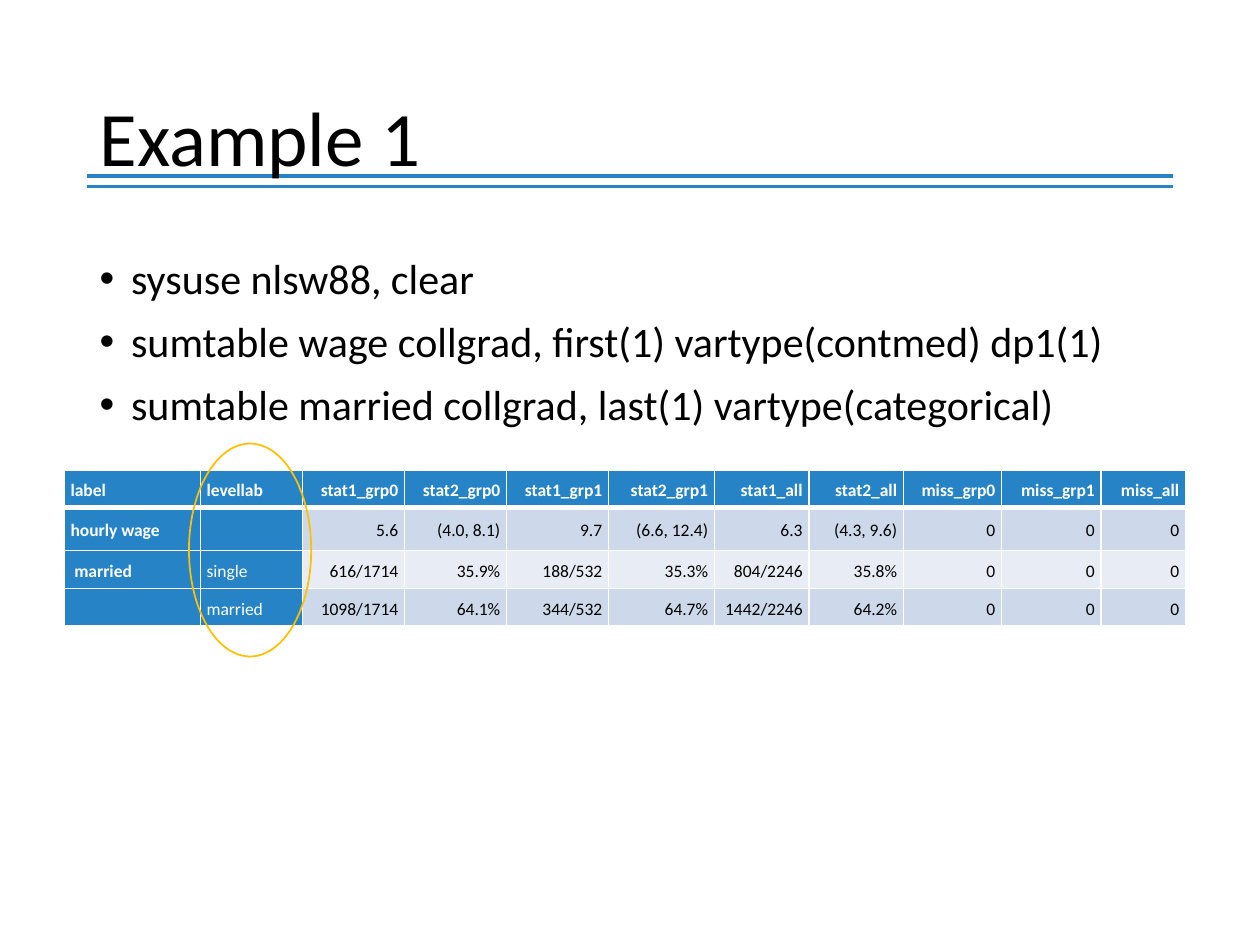
from dataclasses import dataclass

from lxml.etree import SubElement
from pptx import Presentation
from pptx.dml.color import RGBColor
from pptx.enum.shapes import MSO_CONNECTOR as Connector, MSO_SHAPE as Shape
from pptx.enum.text import MSO_ANCHOR as Anchor, PP_ALIGN as Align
from pptx.oxml.ns import qn
from pptx.util import Inches, Pt


@dataclass(frozen=True)
class Theme:
    font: str = "Calibri"
    accent: str = "2683C6"
    highlight: str = "FFC000"
    dark: str = "000000"
    light: str = "FFFFFF"
    odd_band: str = "CDD9EA"
    even_band: str = "E8EDF5"
    title_size: int = 44
    body_size: int = 24
    table_size: int = 10


BULLETS = [
    "sysuse nlsw88, clear",
    "sumtable wage collgrad, first(1) vartype(contmed) dp1(1)",
    "sumtable married collgrad, last(1) vartype(categorical)",
]
ROWS = [
    ["label", "levellab", "stat1_grp0", "stat2_grp0", "stat1_grp1", "stat2_grp1",
     "stat1_all", "stat2_all", "miss_grp0", "miss_grp1", "miss_all"],
    ["hourly wage", "", "5.6", "(4.0, 8.1)", "9.7", "(6.6, 12.4)",
     "6.3", "(4.3, 9.6)", "0", "0", "0"],
    ["married", "single", "616/1714", "35.9%", "188/532", "35.3%",
     "804/2246", "35.8%", "0", "0", "0"],
    ["", "married", "1098/1714", "64.1%", "344/532", "64.7%",
     "1442/2246", "64.2%", "0", "0", "0"],
]
COLUMN_WIDTHS = [1.08, 0.81, 0.81, 0.81, 0.81, 0.84, 0.75, 0.75, 0.78, 0.79, 0.67]
ROW_HEIGHTS = [0.3, 0.34, 0.3, 0.3]
LABEL_COLUMNS = 2
STAT_ROWS = 2


def write(para, text, *, font, size, color, bold=False, align=Align.LEFT,
          spacing=1.0, before=0):
    para.alignment = align
    para.line_spacing = spacing
    para.space_before = Pt(before)
    if not text:
        SubElement(para._p, qn("a:endParaRPr"), sz=str(size * 100))
        return
    span = para.add_run()
    span.text = text
    span.font.name = font
    span.font.size = Pt(size)
    span.font.bold = bold
    span.font.color.rgb = RGBColor.from_string(color)


def set_borders(cell, color, **widths):
    for side, width in widths.items():
        line = SubElement(cell._tc.get_or_add_tcPr(), qn(f"a:ln{side}"), w=str(Pt(width)))
        fill = SubElement(line, qn("a:solidFill"))
        SubElement(fill, qn("a:srgbClr"), val=color)


class PageBuilder:
    def __init__(self, page, theme):
        self.page = page
        self.theme = theme

    def place(self, box, left, top, width, height):
        box.left, box.top = Inches(left), Inches(top)
        box.width, box.height = Inches(width), Inches(height)

    def title(self, text, *bounds):
        box = self.page.shapes.title
        self.place(box, *bounds)
        box.text_frame.vertical_anchor = Anchor.MIDDLE
        write(box.text_frame.paragraphs[0], text, font=self.theme.font,
              size=self.theme.title_size, color=self.theme.dark, spacing=0.9)

    def bullets(self, items, *bounds):
        box = self.page.placeholders[1]
        self.place(box, *bounds)
        frame = box.text_frame
        for index, item in enumerate(items):
            para = frame.add_paragraph() if index else frame.paragraphs[0]
            properties = para._p.get_or_add_pPr()
            properties.set("marL", str(Inches(0.25)))
            properties.set("indent", str(-Inches(0.25)))
            SubElement(properties, qn("a:buFont"), typeface="Arial")
            SubElement(properties, qn("a:buChar"), char="•")
            write(para, item, font=self.theme.font, size=self.theme.body_size,
                  color=self.theme.dark, spacing=0.9, before=10 if index else 0)

    def rule(self, left, right, y):
        line = self.page.shapes.add_connector(
            Connector.STRAIGHT, Inches(left), Inches(y), Inches(right), Inches(y))
        line.line.color.rgb = RGBColor.from_string(self.theme.accent)
        line.line.width = Pt(2.25)
        SubElement(line._element.spPr, qn("a:effectLst"))
        self.page.shapes._spTree.insert(2, line._element)

    def table(self, rows, widths, heights, left, top):
        table = self.page.shapes.add_table(
            len(rows), len(widths), Inches(left), Inches(top),
            Inches(sum(widths)), Inches(sum(heights))).table
        table.horz_banding = False
        for column, width in zip(table.columns, widths):
            column.width = Inches(width)
        for row, height in zip(table.rows, heights):
            row.height = Inches(height)
        for row_index, texts in enumerate(rows):
            for column_index, text in enumerate(texts):
                self.cell(table.cell(row_index, column_index), text,
                          row_index, column_index)
        return table

    def cell(self, cell, text, row, column):
        theme = self.theme
        header = row == 0
        label = column < LABEL_COLUMNS
        upper = row < STAT_ROWS
        band = theme.odd_band if row % 2 else theme.even_band
        set_borders(cell, theme.light, L=1, R=1, T=1, B=3 if header else 1)
        cell.fill.solid()
        cell.fill.fore_color.rgb = RGBColor.from_string(
            theme.accent if header or label else band)
        cell.margin_left = cell.margin_right = Inches(0.05)
        cell.margin_top = cell.margin_bottom = Inches(0.05)
        cell.vertical_anchor = Anchor.MIDDLE if upper else Anchor.BOTTOM
        write(cell.text_frame.paragraphs[0], text, font=theme.font,
              size=theme.table_size, bold=header or column == 0,
              color=theme.light if header or label else theme.dark,
              align=Align.LEFT if label else Align.RIGHT,
              spacing=1.15 if upper else 1.0)

    def ring(self, *bounds):
        ring = self.page.shapes.add_shape(Shape.OVAL, *map(Inches, bounds))
        ring.shadow.inherit = False
        ring.fill.background()
        ring.line.color.rgb = RGBColor.from_string(self.theme.highlight)
        ring.line.width = Pt(1)


def main():
    deck = Presentation()
    deck.slide_width, deck.slide_height = Inches(10), Inches(7.5)
    builder = PageBuilder(deck.slides.add_slide(deck.slide_layouts[1]), Theme())
    for y in (1.4, 1.48):
        builder.rule(0.69, 9.31, y)
    builder.title("Example 1", 0.69, 0.4, 8.62, 1.45)
    builder.bullets(BULLETS, 0.69, 2, 8.62, 4.76)
    table = builder.table(ROWS, COLUMN_WIDTHS, ROW_HEIGHTS, 0.51, 3.73)
    table.cell(2, 0).margin_left = Inches(0.08)
    builder.ring(1.5, 3.52, 0.97, 1.69)
    deck.save("out.pptx")


if __name__ == "__main__":
    main()
